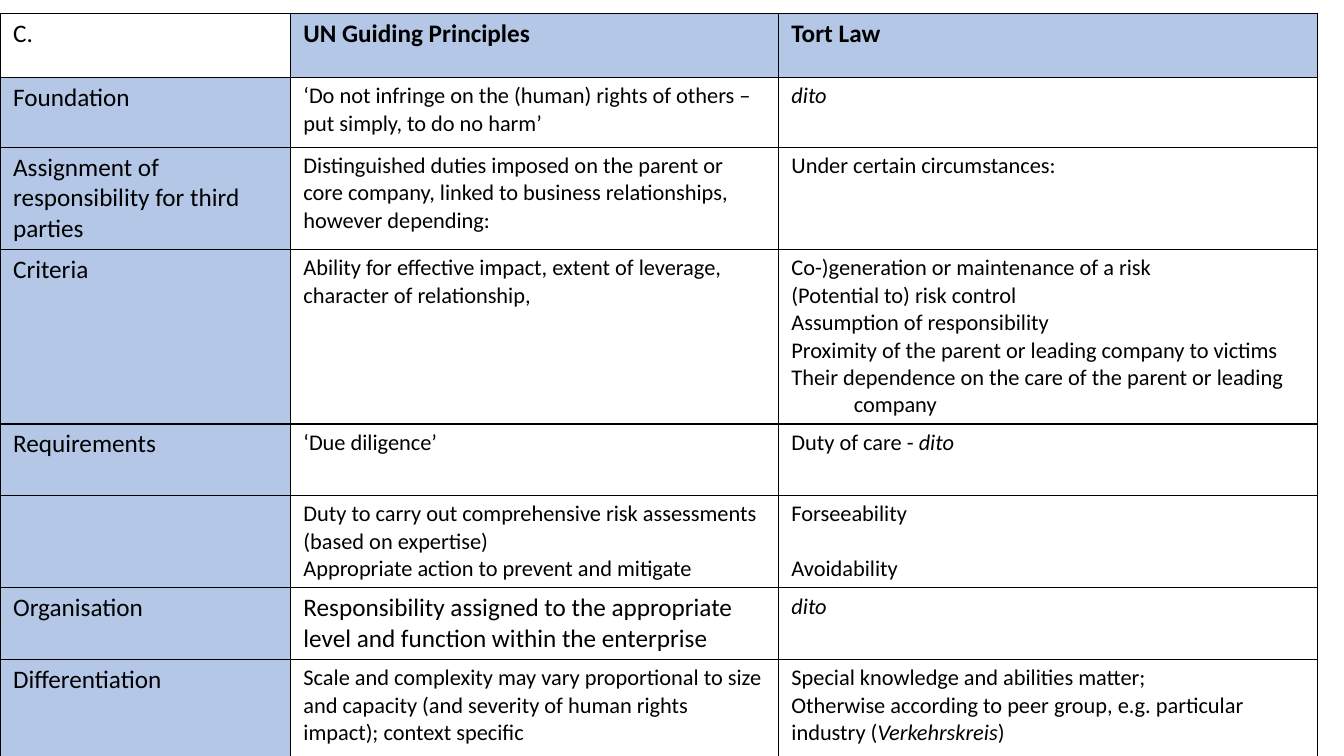
from dataclasses import dataclass

from lxml import etree
from pptx import Presentation
from pptx.dml.color import RGBColor
from pptx.oxml.ns import qn
from pptx.util import Pt

PX = 9144
SLIDE_SIZE = (1333, 750)
TABLE_ORIGIN = (0, 13)
COLUMN_WIDTHS = (288, 484, 535)
ROW_HEIGHTS = (64, 69, 101, 172, 71, 90, 70, 121)
MARGIN_X, MARGIN_Y = 13, 5
CRITERIA_INDENT = 62
CRITERIA_CELL = (3, 2)
LARGE_CELL = (6, 1)
SPACED_CELL = (5, 2)
BORDER_SIDES = ("a:lnL", "a:lnR", "a:lnT", "a:lnB")


@dataclass(frozen=True)
class Theme:
    font: str = "Calibri"
    text: str = "000000"
    border: str = "000000"
    heading_fill: str = "B4C7E7"
    body_fill: str = "FFFFFF"
    heading_size: int = 18
    body_size: int = 16
    blank_line: float = 19.5
    border_width: int = 1


THEME = Theme()

ROWS = (
    ("C.", "UN Guiding Principles", "Tort Law"),
    ("Foundation",
     "‘Do not infringe on the (human) rights of others – put simply, to do no harm’",
     "*dito*"),
    ("Assignment of responsibility for third parties",
     "Distinguished duties imposed on the parent or core company, linked to "
     "business relationships, however depending:",
     "Under certain circumstances:"),
    ("Criteria",
     "Ability for effective impact, extent of leverage, character of relationship,",
     "Co-)generation or maintenance of a risk\n"
     "(Potential to) risk control\n"
     "Assumption of responsibility\n"
     "Proximity of the parent or leading company to victims\n"
     "Their dependence on the care of the parent or leading company"),
    ("Requirements", "‘Due diligence’", "Duty of care - *dito*"),
    ("",
     "Duty to carry out comprehensive risk assessments (based on expertise)\n"
     "Appropriate action to prevent and mitigate",
     "Forseeability\nAvoidability"),
    ("Organisation",
     "Responsibility assigned to the appropriate level and function within the enterprise",
     "*dito*"),
    ("Differentiation",
     "Scale and complexity may vary proportional to size and capacity "
     "(and severity of human rights impact); context specific",
     "Special knowledge and abilities matter;\n"
     "Otherwise according to peer group, e.g. particular industry (*Verkehrskreis*)"),
)


def px(length):
    return length * PX


def write_paragraph(para, text, size, bold):
    para.font.name = THEME.font
    para.font.size = Pt(size)
    para.font.bold = bold
    para.font.color.rgb = RGBColor.from_string(THEME.text)
    for index, part in enumerate(text.split("*")):
        if part:
            span = para.add_run()
            span.text = part
            span.font.italic = index % 2 == 1


def write_cell(cell, text, size, bold):
    cell.margin_left = cell.margin_right = px(MARGIN_X)
    cell.margin_top = cell.margin_bottom = px(MARGIN_Y)
    frame = cell.text_frame
    for index, line in enumerate(text.split("\n")):
        para = frame.add_paragraph() if index else frame.paragraphs[0]
        write_paragraph(para, line, size, bold)


def paint_cell(cell, color):
    properties = cell._tc.get_or_add_tcPr()
    for side in BORDER_SIDES:
        line = etree.SubElement(properties, qn(side), w=str(Pt(THEME.border_width)))
        fill = etree.SubElement(line, qn("a:solidFill"))
        etree.SubElement(fill, qn("a:srgbClr"), val=THEME.border)
    cell.fill.solid()
    cell.fill.fore_color.rgb = RGBColor.from_string(color)


def indent_criteria(cell):
    for para in cell.text_frame.paragraphs:
        properties = para._p.get_or_add_pPr()
        properties.set("marL", str(px(CRITERIA_INDENT)))
        properties.set("indent", str(-px(CRITERIA_INDENT)))


def add_comparison(page):
    frame = page.shapes.add_table(
        len(ROWS), len(COLUMN_WIDTHS), *map(px, TABLE_ORIGIN),
        px(sum(COLUMN_WIDTHS)), px(sum(ROW_HEIGHTS)))
    table = frame.table
    table.first_row = table.horz_banding = False
    for column, width in zip(table.columns, COLUMN_WIDTHS):
        column.width = px(width)
    for row, height in zip(table.rows, ROW_HEIGHTS):
        row.height = px(height)
    for r, texts in enumerate(ROWS):
        for c, text in enumerate(texts):
            cell = table.cell(r, c)
            heading = r == 0 or c == 0
            large = heading or (r, c) == LARGE_CELL
            size = THEME.heading_size if large else THEME.body_size
            write_cell(cell, text, size, r == 0 and c > 0)
            shaded = (r == 0) != (c == 0)
            paint_cell(cell, THEME.heading_fill if shaded else THEME.body_fill)
    table.cell(0, 0).fill.background()
    table.cell(*SPACED_CELL).text_frame.paragraphs[1].space_before = Pt(THEME.blank_line)
    indent_criteria(table.cell(*CRITERIA_CELL))


def main():
    deck = Presentation()
    deck.slide_width, deck.slide_height = map(px, SLIDE_SIZE)
    page = deck.slides.add_slide(deck.slide_layouts[6])
    add_comparison(page)
    deck.save("out.pptx")


if __name__ == "__main__":
    main()
